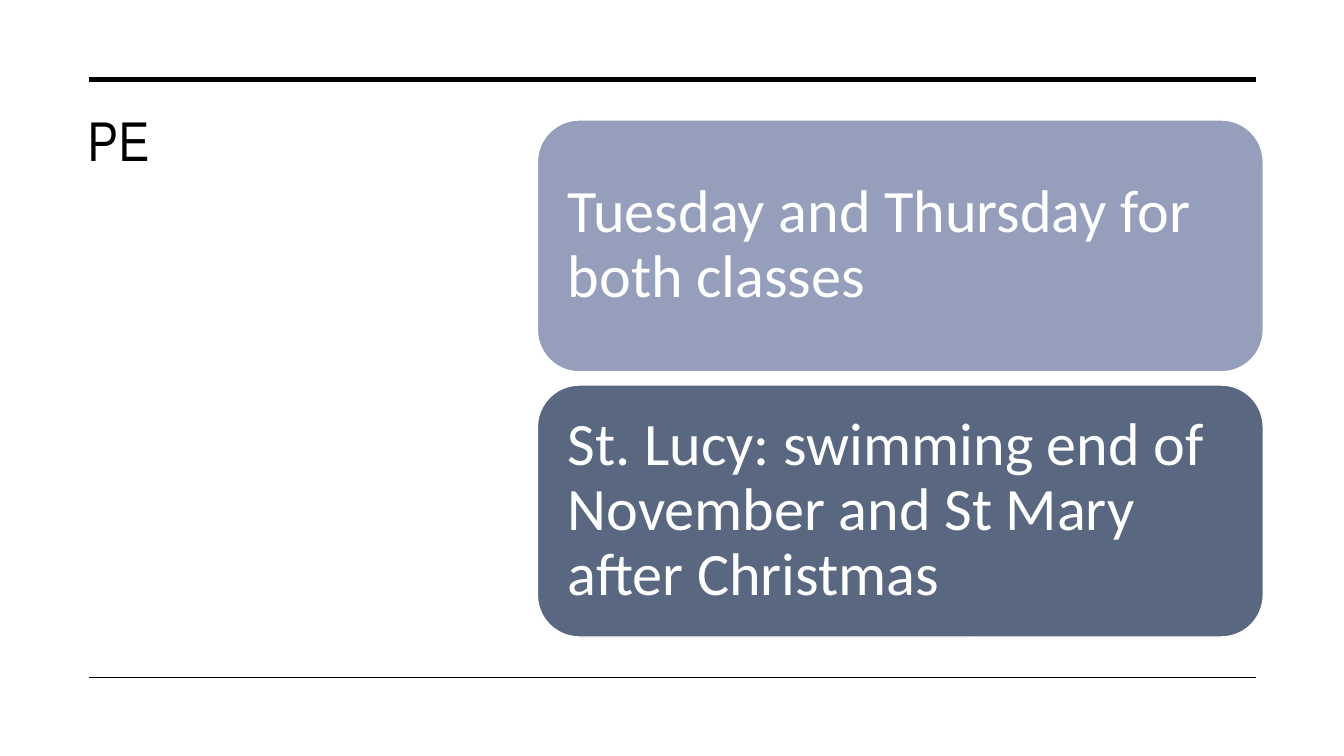
from lxml import etree
from pptx import Presentation
from pptx.dml.color import RGBColor
from pptx.enum import shapes, text
from pptx.oxml import ns
from pptx.util import Inches, Pt

# Content
TITLE = "PE"
CARDS = [
    ("Tuesday and Thursday for both classes", "959EBB"),
    ("St. Lucy: swimming end of November and St Mary after Christmas", "596781"),
]
RULES = [(0.79, 3.5), (6.72, 1)]  # height on the slide, line width

# Layout in inches
RULE_LEFT, RULE_RIGHT = 0.88, 12.46
CARD_LEFT, CARD_TOP, CARD_WIDTH, CARD_HEIGHT = 5.33, 1.19, 7.2, 2.5
CARD_STEP = 2.63
CARD_INSET = 0.18


def color(value):
    return RGBColor.from_string(value)


def style(para, font, size, value):
    para.alignment = text.PP_ALIGN.LEFT
    for span in para.runs:
        span.font.name = font
        span.font.size = Pt(size)
        span.font.color.rgb = color(value)


def set_insets(frame, inset):
    frame.margin_left = frame.margin_right = Inches(inset)
    frame.margin_top = frame.margin_bottom = Inches(inset)


def add_title(page):
    title = page.shapes.title
    title.left, title.top = Inches(0.77), Inches(1)
    title.width, title.height = Inches(4), Inches(4.82)
    frame = title.text_frame
    frame.text = TITLE
    frame.word_wrap = True
    frame.auto_size = text.MSO_AUTO_SIZE.NONE
    frame.vertical_anchor = text.MSO_ANCHOR.TOP
    style(frame.paragraphs[0], "Arial Narrow", 40, "000000")
    # Slightly open letter spacing, in hundredths of a point
    frame.paragraphs[0].runs[0].font._element.set("spc", "30")


def add_rule(page, top, width):
    rule = page.shapes.add_connector(
        shapes.MSO_CONNECTOR.STRAIGHT,
        Inches(RULE_LEFT), Inches(top), Inches(RULE_RIGHT), Inches(top))
    rule.line.color.rgb = color("000000")
    rule.line.width = Pt(width)
    etree.SubElement(rule._element.spPr, ns.qn("a:effectLst"))


def add_card(page, top, words, fill):
    card = page.shapes.add_shape(
        shapes.MSO_SHAPE.ROUNDED_RECTANGLE,
        Inches(CARD_LEFT), Inches(top), Inches(CARD_WIDTH), Inches(CARD_HEIGHT))
    card.shadow.inherit = False
    card.fill.solid()
    card.fill.fore_color.rgb = color(fill)
    card.line.color.rgb = color("FFFFFF")
    card.line.width = Pt(1)
    frame = card.text_frame
    frame.text = words
    frame.word_wrap = True
    frame.vertical_anchor = text.MSO_ANCHOR.MIDDLE
    set_insets(frame, CARD_INSET)
    para = frame.paragraphs[0]
    para.line_spacing = 0.9
    style(para, "Calibri", 43, "FFFFFF")


def main():
    deck = Presentation()
    deck.slide_width, deck.slide_height = Inches(13.33), Inches(7.5)
    page = deck.slides.add_slide(deck.slide_layouts[5])  # title only
    add_title(page)
    for top, width in RULES:
        add_rule(page, top, width)
    for index, (words, fill) in enumerate(CARDS):
        add_card(page, CARD_TOP + index * CARD_STEP, words, fill)
    deck.save("out.pptx")


if __name__ == "__main__":
    main()
